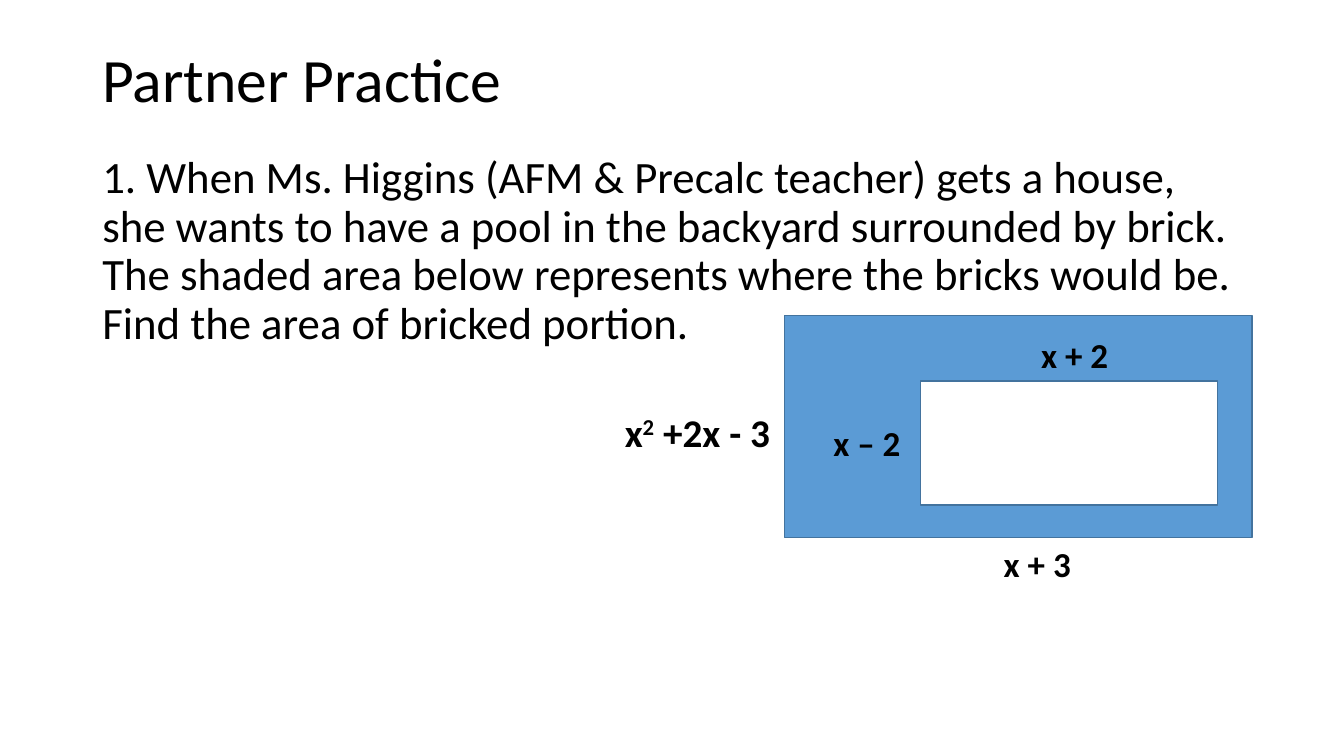
from pptx import Presentation
from pptx.dml.color import RGBColor
from pptx.enum.shapes import MSO_SHAPE
from pptx.enum.text import MSO_ANCHOR
from pptx.util import Pt

COLORS = {"text": "000000", "brick": "5B9BD5", "pool": "FFFFFF", "edge": "43739E"}
FONT = "Calibri"

# Boxes are left, top, width, height in points.
TITLE = ("Partner Practice", (66, 6.5, 828, 104.4), 44)
PROBLEM = (
    "1. When Ms. Higgins (AFM & Precalc teacher) gets a house, she wants to have "
    "a pool in the backyard surrounded by brick. The shaded area below represents "
    "where the bricks would be. Find the area of bricked portion.",
    (66, 107.3, 828, 342.7), 32)
AREAS = [("brick", (560.2, 225.4, 334, 158.4)),
         ("pool", (657.4, 272.2, 212.4, 88.6))]
# Each run is its text and whether it is raised.
SIDES = [
    ([("x", False), ("2", True), (" +2x - 3", False)], (439.2, 288, 149, 41), 28),
    ([("x + 2", False)], (736.6, 234.7, 77, 37.4), 25),
    ([("x – 2", False)], (588.2, 297.4, 81.4, 37.4), 25),
    ([("x + 3", False)], (709.9, 383.8, 88.6, 37.4), 25),
]


def color(name):
    return RGBColor.from_string(COLORS[name])


def add_text(slide, runs, box, size, bold=False, spacing=1.0, anchor=MSO_ANCHOR.TOP):
    frame = slide.shapes.add_textbox(*map(Pt, box)).text_frame
    frame.word_wrap = True
    frame.vertical_anchor = anchor
    paragraph = frame.paragraphs[0]
    paragraph.line_spacing = spacing
    for text, raised in runs:
        run = paragraph.add_run()
        run.text = text
        run.font.name = FONT
        run.font.size = Pt(size)
        run.font.bold = bold
        run.font.color.rgb = color("text")
        if raised:
            run.font._element.set("baseline", "30000")


def add_area(slide, name, box):
    area = slide.shapes.add_shape(MSO_SHAPE.RECTANGLE, *map(Pt, box))
    area.shadow.inherit = False
    area.fill.solid()
    area.fill.fore_color.rgb = color(name)
    area.line.color.rgb = color("edge")
    area.line.width = Pt(1)


def main():
    deck = Presentation()
    deck.slide_width, deck.slide_height = Pt(960), Pt(540)
    slide = deck.slides.add_slide(deck.slide_layouts[6])

    for (text, box, size), anchor in [(TITLE, MSO_ANCHOR.MIDDLE), (PROBLEM, MSO_ANCHOR.TOP)]:
        add_text(slide, [(text, False)], box, size, spacing=0.9, anchor=anchor)
    for name, box in AREAS:
        add_area(slide, name, box)
    for runs, box, size in SIDES:
        add_text(slide, runs, box, size, bold=True)

    deck.save("out.pptx")


if __name__ == "__main__":
    main()
